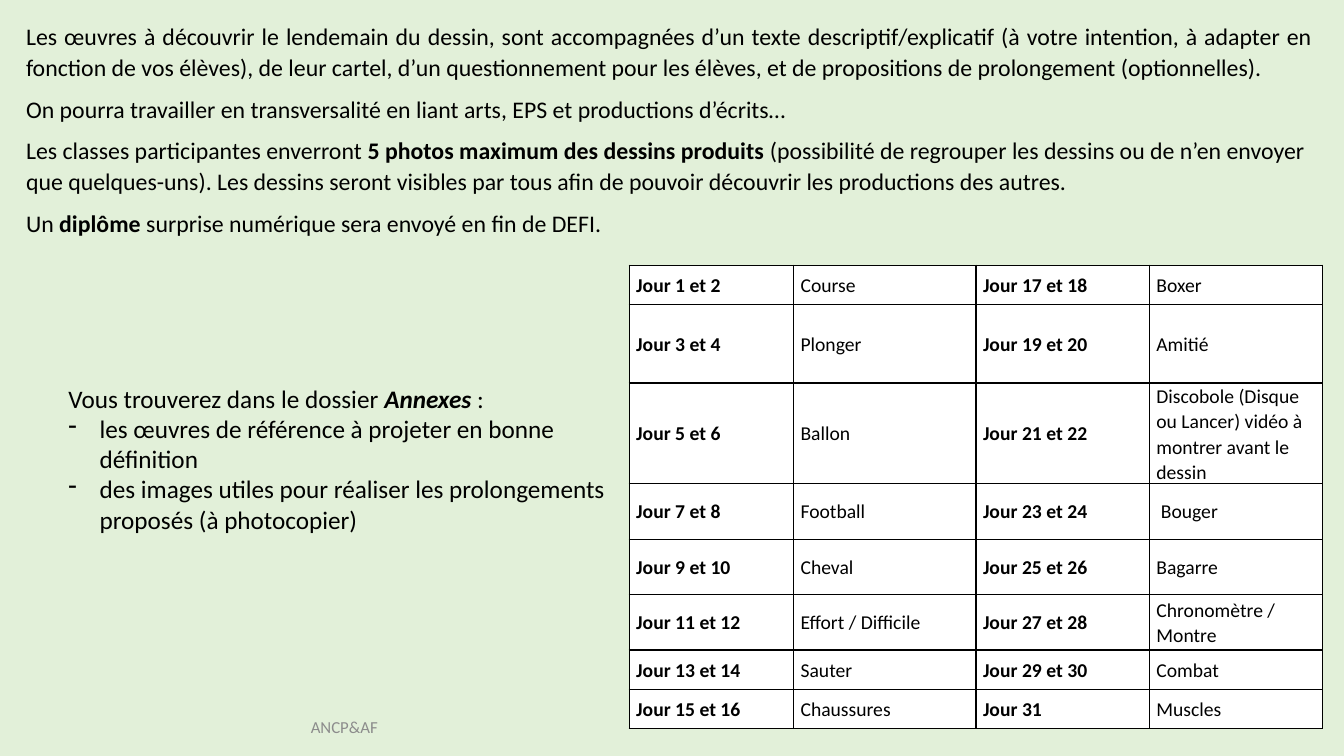
from dataclasses import dataclass

from lxml.etree import SubElement
from pptx import Presentation
from pptx.dml.color import RGBColor
from pptx.enum.text import MSO_ANCHOR, PP_ALIGN
from pptx.oxml.ns import qn
from pptx.util import Inches, Pt


@dataclass(frozen=True)
class Theme:
    """Colours, font and type sizes of the slide."""
    back: str = "E2F0D9"
    cell: str = "FFFFFF"
    ink: str = "000000"
    muted: str = "8C8C8C"
    font: str = "Calibri"
    intro: int = 17
    note: int = 18
    table: int = 14
    foot: int = 12
    rule: int = 1
    lead: float = 1.07
    after: int = 8


THEME = Theme()

INTRO = [
    (PP_ALIGN.JUSTIFY, [
        ("Les œuvres à découvrir le lendemain du dessin, sont accompagnées d’un texte "
         "descriptif/explicatif (à votre intention, à adapter en fonction de vos élèves), "
         "de leur cartel, d’un questionnement pour les élèves, et de propositions de "
         "prolongement (optionnelles).", "")]),
    (PP_ALIGN.JUSTIFY, [
        ("On pourra travailler en transversalité en liant arts, EPS et productions "
         "d’écrits…", "")]),
    (PP_ALIGN.LEFT, [
        ("Les classes participantes enverront ", ""),
        ("5 photos maximum des dessins produits ", "b"),
        ("(possibilité de regrouper les dessins ou de n’en envoyer que quelques-uns). "
         "Les dessins seront visibles par tous afin de pouvoir découvrir les productions "
         "des autres.", "")]),
    (PP_ALIGN.LEFT, [
        ("Un ", ""), ("diplôme", "b"),
        (" surprise numérique sera envoyé en fin de DEFI.", "")]),
]
LEAD = [("Vous trouverez dans le dossier ", ""), ("Annexes", "bi"), (" :", "")]
ITEMS = [
    "les œuvres de référence à projeter en bonne définition",
    "des images utiles pour réaliser les prolongements proposés (à photocopier)",
]
TOPICS = [
    "Course", "Plonger", "Ballon", "Football",
    "Cheval", "Effort / Difficile", "Sauter", "Chaussures",
    "Boxer", "Amitié", "Discobole (Disque ou Lancer) vidéo à montrer avant le dessin",
    " Bouger", "Bagarre", "Chronomètre / Montre", "Combat", "Muscles",
]
LAST = 31
COLS = [1.63, 1.81, 1.72, 1.72]
ROWS = [0.39, 0.78, 0.82, 0.55, 0.55, 0.55, 0.39, 0.39]


def write(para, runs, size, color=THEME.ink):
    """Add styled runs to a paragraph."""
    for text, style in runs:
        run = para.add_run()
        run.text = text
        font = run.font
        font.name, font.size = THEME.font, Pt(size)
        font.bold, font.italic = "b" in style, "i" in style
        font.color.rgb = RGBColor.from_string(color)


def space(para):
    """Give a paragraph the line and paragraph spacing of the theme."""
    para.line_spacing = THEME.lead
    para.space_after = Pt(THEME.after)


def frame(slide, box):
    """Add a wrapping text box and return its text frame."""
    text = slide.shapes.add_textbox(*map(Inches, box)).text_frame
    text.word_wrap = True
    return text


def dash(para, indent):
    """Turn a paragraph into a dash item with a hanging indent."""
    props = para._p.get_or_add_pPr()
    props.set("marL", str(Inches(indent)))
    props.set("indent", str(-Inches(indent)))
    SubElement(props, qn("a:buChar")).set("char", "-")


def border(cell):
    """Draw a thin line on the four sides of a cell."""
    props = cell._tc.get_or_add_tcPr()
    for spot, side in enumerate(("lnL", "lnR", "lnT", "lnB")):
        line = props.makeelement(qn("a:" + side), {"w": str(Pt(THEME.rule))})
        fill = SubElement(line, qn("a:solidFill"))
        SubElement(fill, qn("a:srgbClr")).set("val", THEME.ink)
        props.insert(spot, line)


def add_intro(slide, box):
    """Place the opening paragraphs."""
    text = frame(slide, box)
    for place, (align, runs) in enumerate(INTRO):
        para = text.add_paragraph() if place else text.paragraphs[0]
        para.alignment = align
        space(para)
        write(para, runs, THEME.intro)


def add_note(slide, box):
    """Place the note on the annexes with its dash list."""
    text = frame(slide, box)
    write(text.paragraphs[0], LEAD, THEME.note)
    for item in ITEMS:
        para = text.add_paragraph()
        dash(para, 0.31)
        write(para, [(item, "")], THEME.note)


def add_foot(slide, box):
    """Place the centred footer."""
    text = frame(slide, box)
    text.vertical_anchor = MSO_ANCHOR.MIDDLE
    para = text.paragraphs[0]
    para.alignment = PP_ALIGN.CENTER
    write(para, [("ANCP&AF", "")], THEME.foot, THEME.muted)


def fill_cell(cell, text, style):
    """Write and style one table cell."""
    cell.fill.solid()
    cell.fill.fore_color.rgb = RGBColor.from_string(THEME.cell)
    cell.vertical_anchor = MSO_ANCHOR.MIDDLE
    cell.margin_left = cell.margin_right = Inches(0.07)
    cell.margin_top = cell.margin_bottom = 0
    border(cell)
    para = cell.text_frame.paragraphs[0]
    space(para)
    write(para, [(text, style)], THEME.table)


def add_days(slide, box):
    """Place the table of days and topics, read down in two halves."""
    shape = slide.shapes.add_table(len(ROWS), len(COLS), *map(Inches, box))
    table = shape.table
    table.first_row = table.horz_banding = False
    for col, width in zip(table.columns, COLS):
        col.width = Inches(width)
    for row, height in zip(table.rows, ROWS):
        row.height = Inches(height)
    for place, topic in enumerate(TOPICS):
        half, row = divmod(place, len(ROWS))
        day = 2 * place + 1
        label = f"Jour {day} et {day + 1}" if day < LAST else f"Jour {day}"
        fill_cell(table.cell(row, 2 * half), label, "b")
        fill_cell(table.cell(row, 2 * half + 1), topic, "")


def main():
    """Build the slide and save it."""
    deck = Presentation()
    deck.slide_width, deck.slide_height = Inches(13.33), Inches(7.5)
    slide = deck.slides.add_slide(deck.slide_layouts[6])
    back = slide.background.fill
    back.solid()
    back.fore_color.rgb = RGBColor.from_string(THEME.back)
    add_intro(slide, (0.16, 0.15, 12.96, 2.26))
    add_days(slide, (6.24, 2.63, sum(COLS), sum(ROWS)))
    add_foot(slide, (2.02, 7.06, 2.79, 0.3))
    add_note(slide, (0.58, 3.75, 5.66, 1.62))
    deck.save("out.pptx")


if __name__ == "__main__":
    main()
